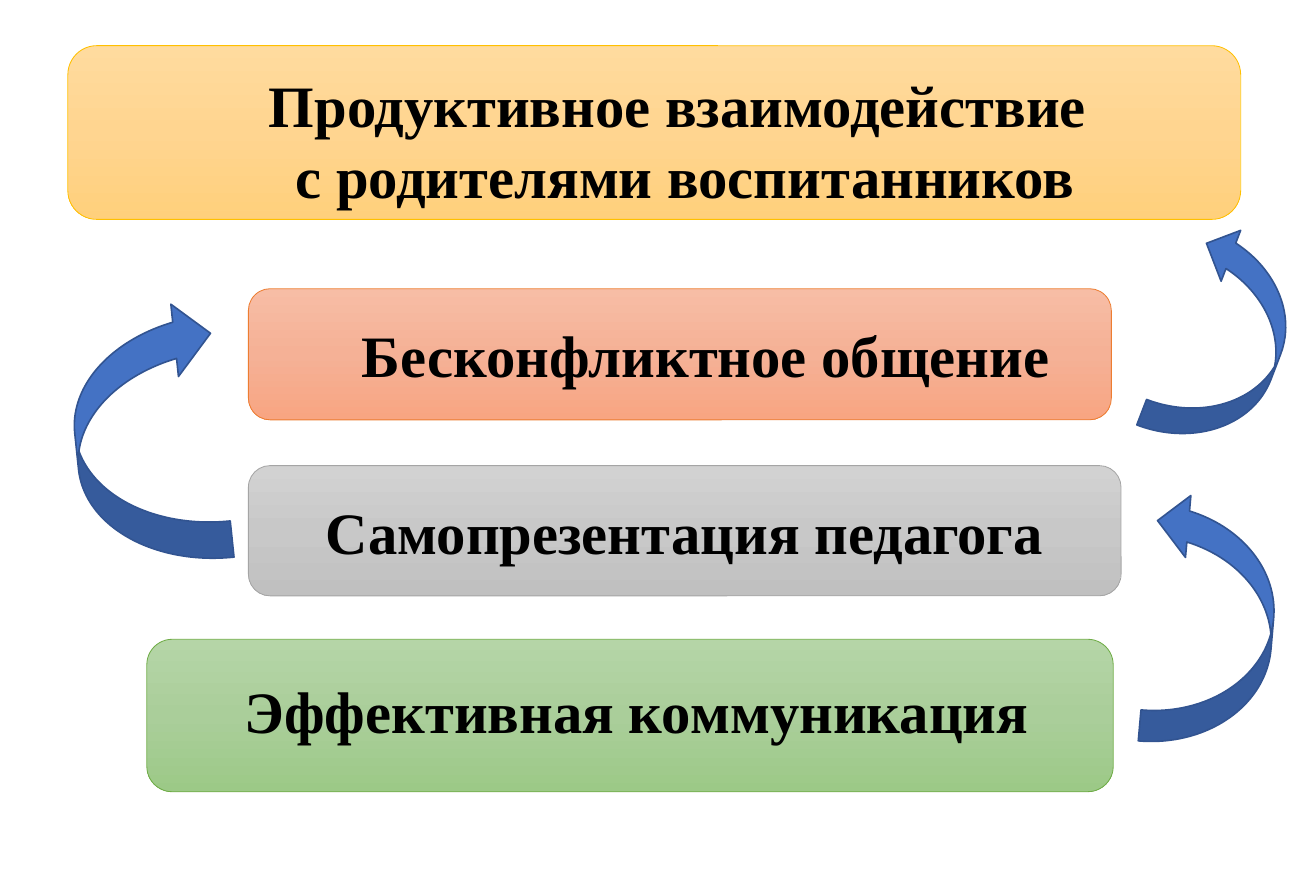
from copy import deepcopy

from pptx import Presentation
from pptx.dml.color import RGBColor as Rgb
from pptx.enum.shapes import MSO_SHAPE as Kind
from pptx.enum.text import MSO_ANCHOR as Anchor, MSO_AUTO_SIZE as Fit, PP_ALIGN as Align
from pptx.util import Cm, Pt


def tint(code):
    return Rgb.from_string(code)


class Deck:
    font = "Times New Roman"
    size = 36
    ink = "000000"
    blue = "4472C4"
    edge = "325491"

    def __init__(self, slide):
        self.slide = slide

    def shape(self, kind, place, line, width):
        item = self.slide.shapes.add_shape(kind, *map(Cm, place))
        item.shadow.inherit = False
        item.line.color.rgb = tint(line)
        item.line.width = Pt(width)
        return item

    def card(self, place, shades, line):
        """Rounded box with a three-step gradient running downwards."""
        item = self.shape(Kind.ROUNDED_RECTANGLE, place, line, 0.5)
        item.fill.gradient()
        item.fill.gradient_angle = 270
        first = item.element.xpath(".//a:gsLst/a:gs")[0]
        first.addnext(deepcopy(first))
        for step, (stop, shade) in enumerate(zip(item.fill.gradient_stops, shades)):
            stop.position = step / 2
            stop.color.rgb = tint(shade)

    def arrow(self, kind, place, turn, flip=False):
        item = self.shape(kind, place, self.edge, 1)
        item.fill.solid()
        item.fill.fore_color.rgb = tint(self.blue)
        item.rotation = turn
        if flip:
            item.element.spPr.xfrm.set("flipH", "1")

    def style(self, item, text, align):
        frame = item.text_frame
        frame.text = text
        frame.word_wrap = True
        frame.auto_size = Fit.NONE
        frame.vertical_anchor = Anchor.TOP
        for para in frame.paragraphs:
            para.alignment = align
            for run in para.runs:
                run.font.name = self.font
                run.font.size = Pt(self.size)
                run.font.bold = True
                run.font.color.rgb = tint(self.ink)

    def label(self, place, text):
        item = self.slide.shapes.add_textbox(*map(Cm, place))
        self.style(item, text, Align.LEFT)
        item.text_frame.word_wrap = False

    def title(self, place, text):
        item = self.slide.shapes.title
        item.left, item.top, item.width, item.height = map(Cm, place)
        self.style(item, text, Align.CENTER)
        # Bring the title in front of its card
        item.element.getparent().append(item.element)


def main():
    show = Presentation()
    show.slide_width, show.slide_height = Cm(28.5), Cm(19.05)
    deck = Deck(show.slides.add_slide(show.slide_layouts[5]))

    # Steps, from the bottom up
    steps = [
        ("Эффективная коммуникация", (3.18, 13.84, 20.93, 3.3), (5.05, 14.48, 18.24, 1.8),
         ("B5D5A7", "AACE9A", "9CC987"), "70AD47"),
        ("Самопрезентация педагога", (5.38, 10.08, 18.9, 2.82), (6.81, 10.62, 16.05, 1.8),
         ("D2D2D2", "C8C8C8", "C0C0C0"), "A5A5A5"),
        ("Бесконфликтное общение", (5.38, 6.25, 18.69, 2.84), (7.59, 6.78, 15.39, 1.8),
         ("F7BDA5", "F5B196", "F8A582"), "ED7D31"),
    ]
    for text, box, spot, shades, line in steps:
        deck.card(box, shades, line)
        deck.label(spot, text)

    # Goal at the top
    deck.card((1.47, 0.99, 25.4, 3.76), ("FFDB9E", "FFD590", "FFD07C"), "FFC000")
    deck.title((4.37, 1.37, 20.93, 3.33),
               "Продуктивное взаимодействие \nс родителями воспитанников")

    # Arrows leading from step to step
    deck.arrow(Kind.CURVED_RIGHT_ARROW, (25.4, 4.98, 2.36, 4.8), 201)
    deck.arrow(Kind.CURVED_UP_ARROW, (23.5, 12.09, 5.46, 2.69), 275)
    deck.arrow(Kind.CURVED_RIGHT_ARROW, (1.63, 6.58, 3.15, 5.66), 174, flip=True)

    show.save("out.pptx")


if __name__ == "__main__":
    main()
